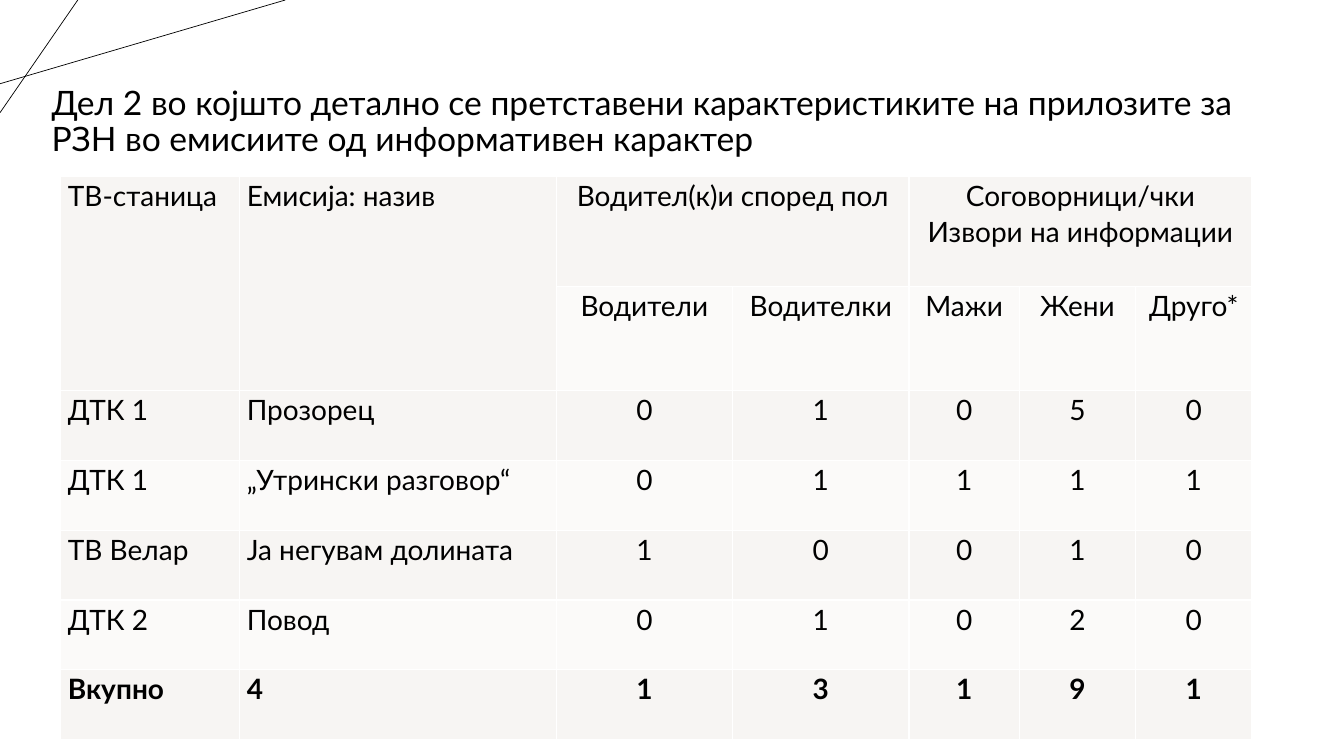
"""Build a slide with a table of hosts and sources by gender in informative TV shows."""
from lxml import etree
from pptx import Presentation
from pptx.dml.color import RGBColor
from pptx.enum.shapes import MSO_CONNECTOR
from pptx.enum.text import MSO_ANCHOR, PP_ALIGN
from pptx.oxml.ns import qn
from pptx.util import Cm, Pt

STRAIGHT = MSO_CONNECTOR.STRAIGHT
TOP = MSO_ANCHOR.TOP
LEFT, CENTER = PP_ALIGN.LEFT, PP_ALIGN.CENTER

HEADLINE = ("Дел 2 во којшто детално се претставени карактеристиките на прилозите за "
            "РЗН во емисиите од информативен карактер")
STATION_ROWS = [
    ("ТВ-станица", "Емисија: назив", "Водител(к)и според пол", "",
     "Соговорници/чки\nИзвори на информации", "", ""),
    ("", "", "Водители", "Водителки", "Мажи", "Жени", "Друго*"),
    ("ДТК 1", "Прозорец", 0, 1, 0, 5, 0),
    ("ДТК 1", "„Утрински разговор“", 0, 1, 1, 1, 1),
    ("ТВ Велар", "Ја негувам долината", 1, 0, 0, 1, 0),
    ("ДТК 2", "Повод", 0, 1, 0, 2, 0),
    ("Вкупно", 4, 1, 3, 1, 9, 1),
]
MERGES = [((0, 0), (1, 0)), ((0, 1), (1, 1)), ((0, 2), (0, 3)), ((0, 4), (0, 6))]
COLUMN_WIDTHS = [4.51, 7.98, 4.44, 4.45, 2.78, 2.93, 2.93]
ROW_HEIGHTS = [2.78, 2.61] + [1.76] * 5
BAND_FILLS = ["F7F5F3", "FBFAF9"]
NAME_COLUMNS = 2
CORNER_LINES = [(0, 2.11, 7.19, 0), (1.96, 0, 0, 2.84)]

FONT = "Lato"
INK, BORDER = "000000", "FFFFFF"
HEADLINE_PARAGRAPH = {"line_spacing": 0.9, "space_before": Pt(10)}
HEADLINE_FRAME = {"word_wrap": True, "vertical_anchor": TOP}
CELL_FORMAT = {"margin_left": Cm(0.18), "margin_right": Cm(0.18),
               "margin_top": 0, "margin_bottom": 0, "vertical_anchor": TOP}


def color(value):
    return RGBColor.from_string(value)


def apply(target, values):
    for name, value in values.items():
        setattr(target, name, value)


def write(frame, text, size, paragraph_format, bold=False):
    frame.text = text
    font_format = {"name": FONT, "size": Pt(size), "bold": bold}
    for paragraph in frame.paragraphs:
        apply(paragraph, paragraph_format)
        apply(paragraph.font, font_format)
        for run in paragraph.runs:
            apply(run.font, font_format)
            run.font.color.rgb = color(INK)


def add_borders(cell):
    properties = cell._tc.get_or_add_tcPr()
    for position, side in enumerate(("a:lnL", "a:lnR", "a:lnT", "a:lnB")):
        edge = etree.Element(qn(side), w=str(Pt(1)))
        fill = etree.SubElement(edge, qn("a:solidFill"))
        etree.SubElement(fill, qn("a:srgbClr"), val=BORDER)
        properties.insert(position, edge)


def add_corner_lines(slide):
    for ends in CORNER_LINES:
        line = slide.shapes.add_connector(STRAIGHT, *map(Cm, ends))
        line.line.color.rgb = color(INK)
        line.line.width = Pt(0.5)
        etree.SubElement(line._element.spPr, qn("a:effectLst"))


def add_station_table(slide):
    table = slide.shapes.add_table(
        len(ROW_HEIGHTS), len(COLUMN_WIDTHS), Cm(1.53), Cm(4.45),
        Cm(sum(COLUMN_WIDTHS)), Cm(sum(ROW_HEIGHTS))).table
    for column, width in zip(table.columns, COLUMN_WIDTHS):
        column.width = Cm(width)
    for row, height in zip(table.rows, ROW_HEIGHTS):
        row.height = Cm(height)
    for r, values in enumerate(STATION_ROWS):
        for c, value in enumerate(values):
            cell = table.cell(r, c)
            apply(cell, CELL_FORMAT)
            cell.fill.solid()
            cell.fill.fore_color.rgb = color(BAND_FILLS[r % 2])
            add_borders(cell)
            alignment = LEFT if c < NAME_COLUMNS else CENTER
            write(cell.text_frame, str(value), 20,
                  {"alignment": alignment, "line_spacing": 1.07},
                  bold=r == len(STATION_ROWS) - 1)
    for first, last in MERGES:
        table.cell(*first).merge(table.cell(*last))


def add_headline(slide):
    headline = slide.shapes.add_textbox(Cm(1.05), Cm(2.06), Cm(31.47), Cm(2.41))
    apply(headline.text_frame, HEADLINE_FRAME)
    write(headline.text_frame, HEADLINE, 24, HEADLINE_PARAGRAPH)


def main():
    deck = Presentation()
    deck.slide_width, deck.slide_height = Cm(33.87), Cm(19.05)
    slide = deck.slides.add_slide(deck.slide_layouts[6])
    add_corner_lines(slide)
    add_station_table(slide)
    add_headline(slide)
    deck.save("out.pptx")


if __name__ == "__main__":
    main()
